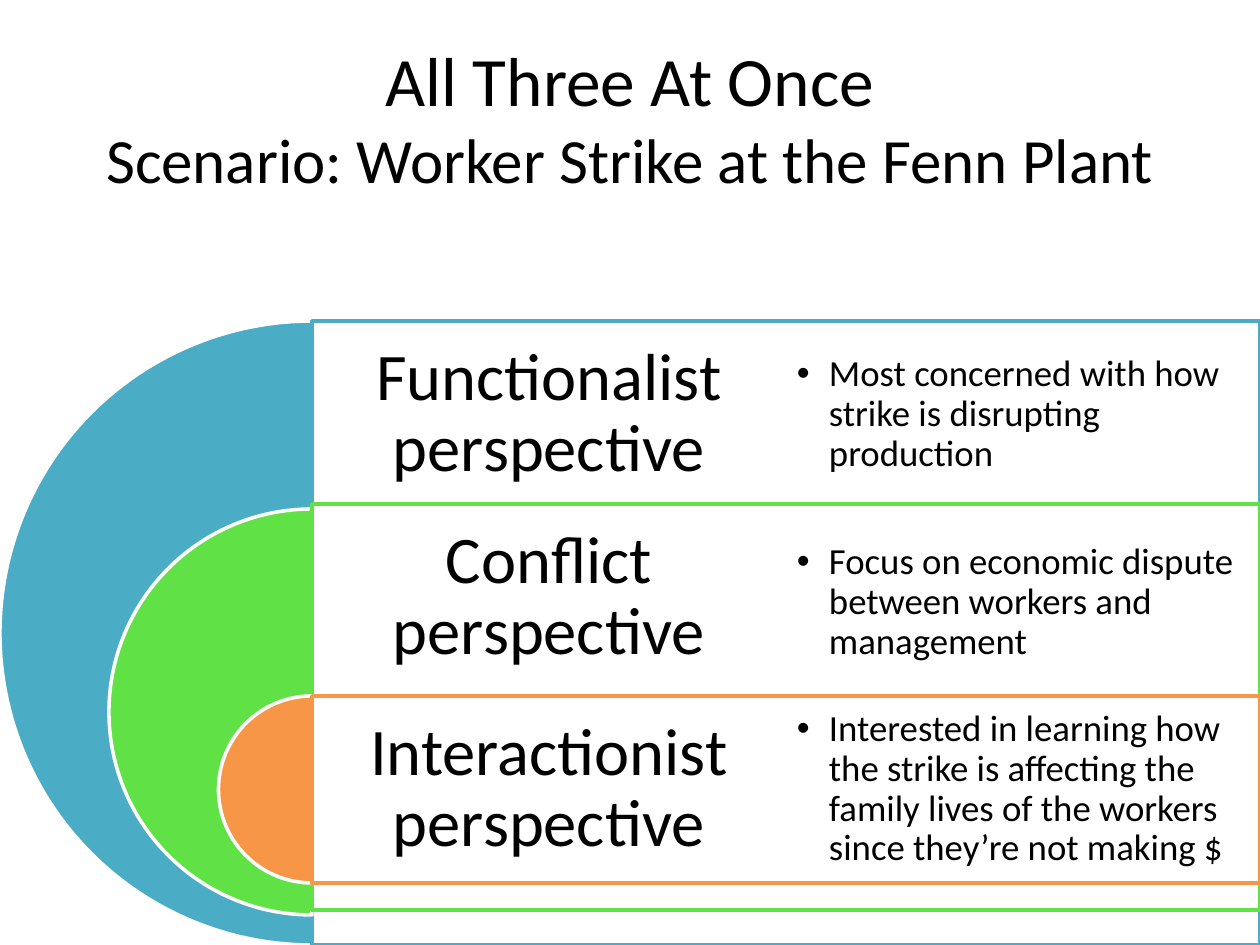
from dataclasses import dataclass

from lxml import etree
from pptx import Presentation
from pptx.dml.color import RGBColor
from pptx.enum.shapes import MSO_SHAPE
from pptx.enum.text import MSO_ANCHOR, PP_ALIGN
from pptx.oxml.ns import qn
from pptx.util import Emu, Pt

PIE, RECTANGLE = MSO_SHAPE.PIE, MSO_SHAPE.RECTANGLE
MIDDLE = MSO_ANCHOR.MIDDLE
CENTER, LEFT = PP_ALIGN.CENTER, PP_ALIGN.LEFT
EMU_PER_PX = 914400 // 126
PAGE_WIDTH, PAGE_HEIGHT = 1260, 945

AXIS = 312  # flat side of the half circles and left edge of the panels
COLUMN_WIDTH = (PAGE_WIDTH - AXIS) // 2
ROW_HEIGHT = 187
BULLET_INDENT = 32


@dataclass(frozen=True)
class Theme:
    font: str = "Calibri"
    text: str = "000000"
    paper: str = "FFFFFF"
    functionalist: str = "4BACC6"
    conflict: str = "60E146"
    interactionist: str = "F79646"
    title_size: float = 39.6
    scenario_size: float = 36
    name_size: float = 38
    detail_size: float = 21
    line_width: float = 2
    panel_opacity: int = 90


THEME = Theme()

TITLE = [
    ("All Three At Once", THEME.title_size),
    ("Scenario: Worker Strike at the Fenn Plant", THEME.scenario_size),
]

# name, detail, colour, half circle (top, diameter), panel (top, height)
PERSPECTIVES = [
    ("Functionalist perspective",
     "Most concerned with how strike is disrupting production",
     THEME.functionalist, (321, 624), (321, 624)),
    ("Conflict perspective",
     "Focus on economic dispute between workers and management",
     THEME.conflict, (509, 406), (504, 406)),
    ("Interactionist perspective",
     "Interested in learning how the strike is affecting the family lives "
     "of the workers since they’re not making $",
     THEME.interactionist, (696, 187), (696, 187)),
]


def px(length):
    return Emu(round(length * EMU_PER_PX))


def set_values(target, values):
    for name, value in values.items():
        setattr(target, name, value)


def add_preset(page, kind, box, fill, line):
    shape = page.shapes.add_shape(kind, *map(px, box))
    shape.shadow.inherit = False
    shape.fill.solid()
    shape.fill.fore_color.rgb = RGBColor.from_string(fill)
    shape.line.color.rgb = RGBColor.from_string(line)
    shape.line.width = Pt(THEME.line_width)
    return shape


def add_half_circle(page, top, diameter, color):
    box = (AXIS - diameter / 2, top, diameter, diameter)
    pie = add_preset(page, PIE, box, color, THEME.paper)
    # Angles in units of 100000/60000 degree: 90 to 270 degrees
    pie.adjustments[0], pie.adjustments[1] = 54, 162


def add_panel(page, top, height, color):
    box = (AXIS, top, PAGE_WIDTH - AXIS, height)
    panel = add_preset(page, RECTANGLE, box, THEME.paper, color)
    fill_color = panel.fill._xPr.find(qn("a:solidFill"))[0]
    etree.SubElement(fill_color, qn("a:alpha"), val=str(THEME.panel_opacity * 1000))


def add_text(page, box, lines, align, inset_x, inset_y, spacing=1.0):
    """Add one paragraph whose (text, size) lines are parted by line breaks."""
    frame = page.shapes.add_textbox(*map(px, box)).text_frame
    set_values(frame, {
        "word_wrap": True, "vertical_anchor": MIDDLE,
        "margin_left": px(inset_x), "margin_right": px(inset_x),
        "margin_top": px(inset_y), "margin_bottom": px(inset_y),
    })
    para = frame.paragraphs[0]
    set_values(para, {"alignment": align, "line_spacing": spacing})
    for index, (text, size) in enumerate(lines):
        if index:
            para.add_line_break()
        span = para.add_run()
        span.text = text
        set_values(span.font, {"name": THEME.font, "size": Pt(size)})
        span.font.color.rgb = RGBColor.from_string(THEME.text)
    return para


def add_bullet(para):
    properties = para._p.get_or_add_pPr()
    properties.set("marL", str(px(BULLET_INDENT)))
    properties.set("indent", str(-px(BULLET_INDENT)))
    etree.SubElement(properties, qn("a:buFont"), typeface="Arial")
    etree.SubElement(properties, qn("a:buChar"), char="•")


def add_perspective(page, name, detail, color, circle, panel):
    add_half_circle(page, *circle, color)
    add_panel(page, *panel, color)
    name_box = (AXIS, panel[0], COLUMN_WIDTH, ROW_HEIGHT)
    add_text(page, name_box, [(name, THEME.name_size)], CENTER, 20, 20, 0.9)
    detail_box = (AXIS + COLUMN_WIDTH, circle[0], COLUMN_WIDTH, ROW_HEIGHT)
    add_bullet(add_text(page, detail_box, [(detail, THEME.detail_size)],
                        LEFT, 11, 11, 0.9))


def main():
    deck = Presentation()
    set_values(deck, {"slide_width": px(PAGE_WIDTH), "slide_height": px(PAGE_HEIGHT)})
    page = deck.slides.add_slide(deck.slide_layouts[6])
    add_text(page, (63, 38, 1134, 158), TITLE, CENTER, 13, 6)
    for perspective in PERSPECTIVES:
        add_perspective(page, *perspective)
    deck.save("out.pptx")


if __name__ == "__main__":
    main()
